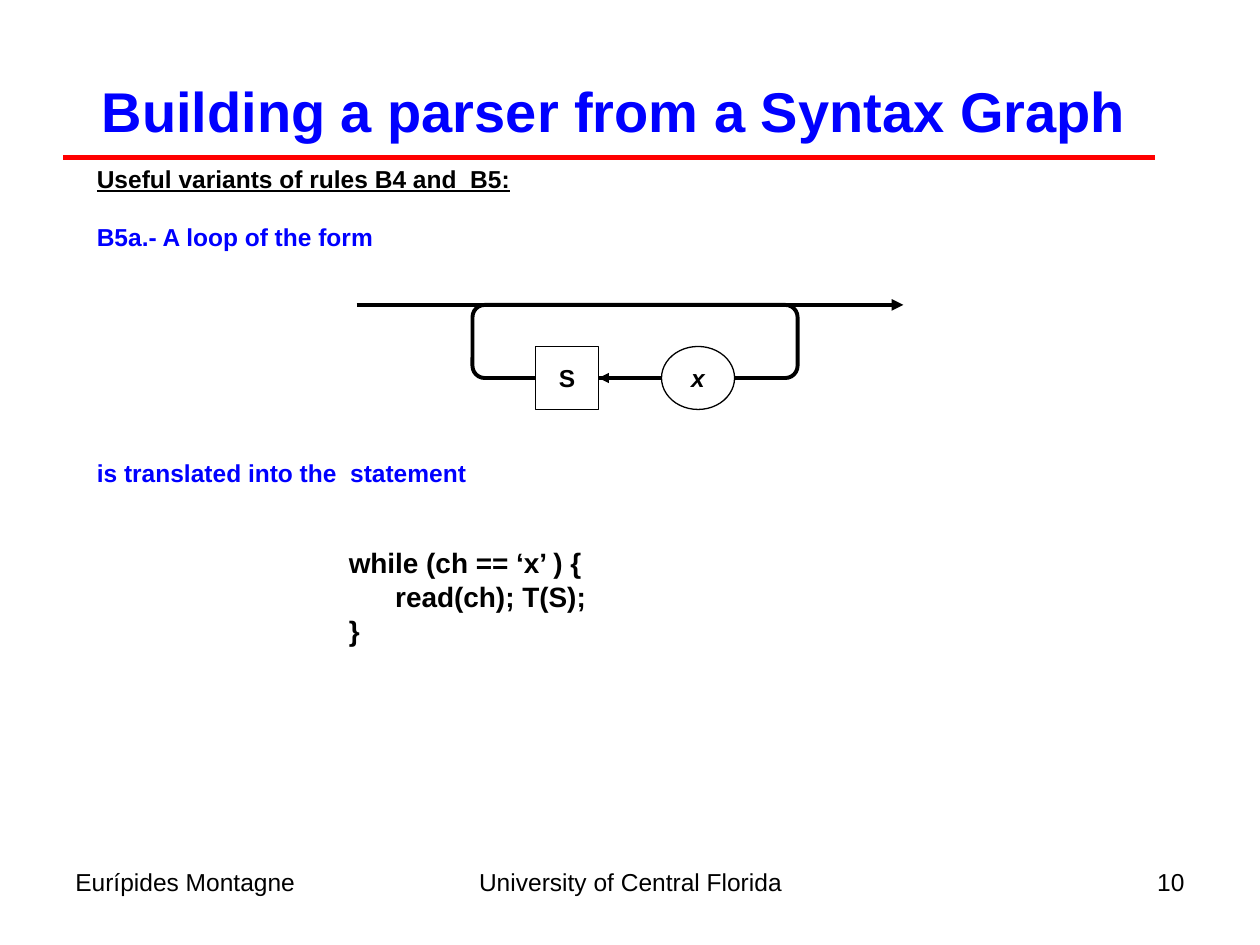
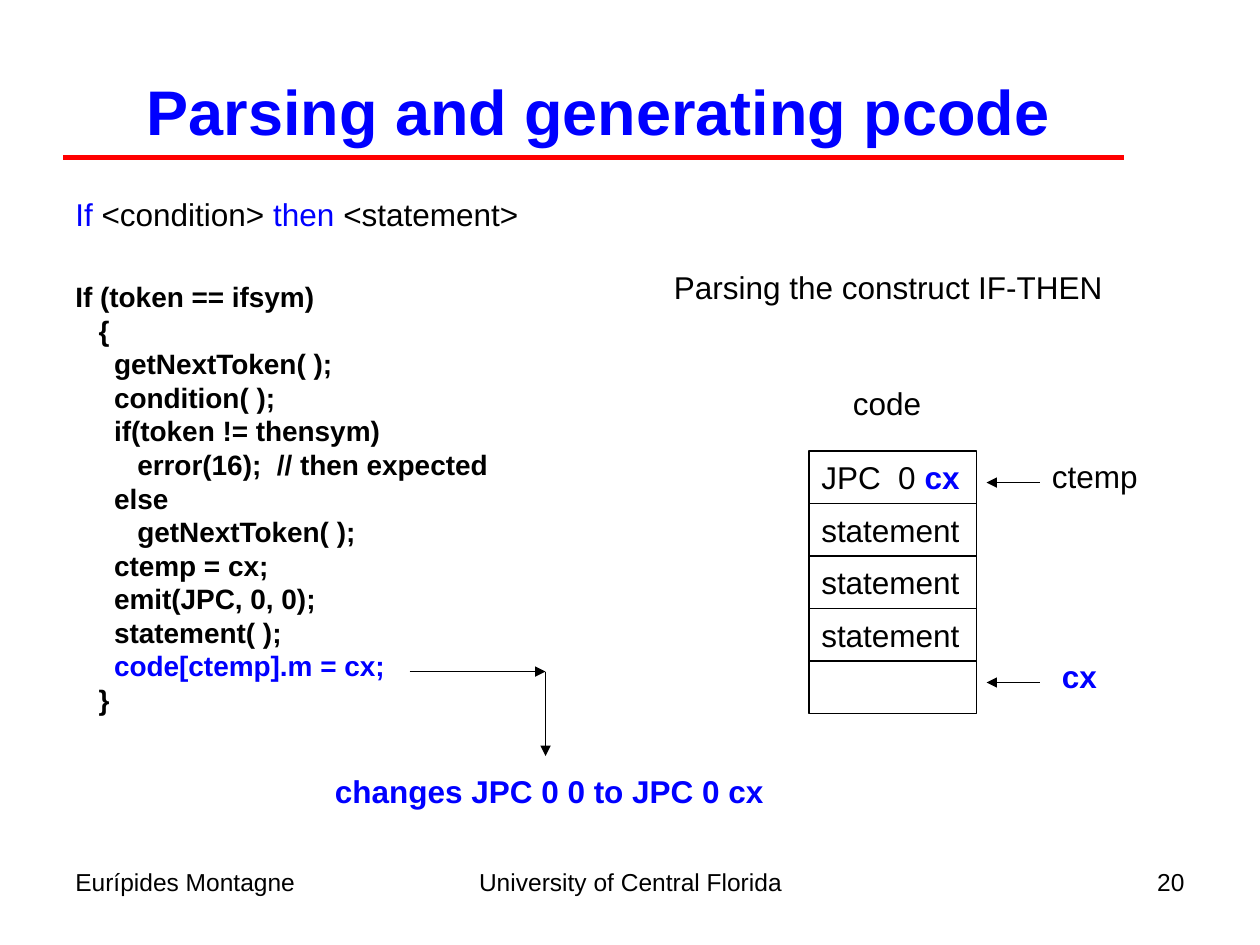
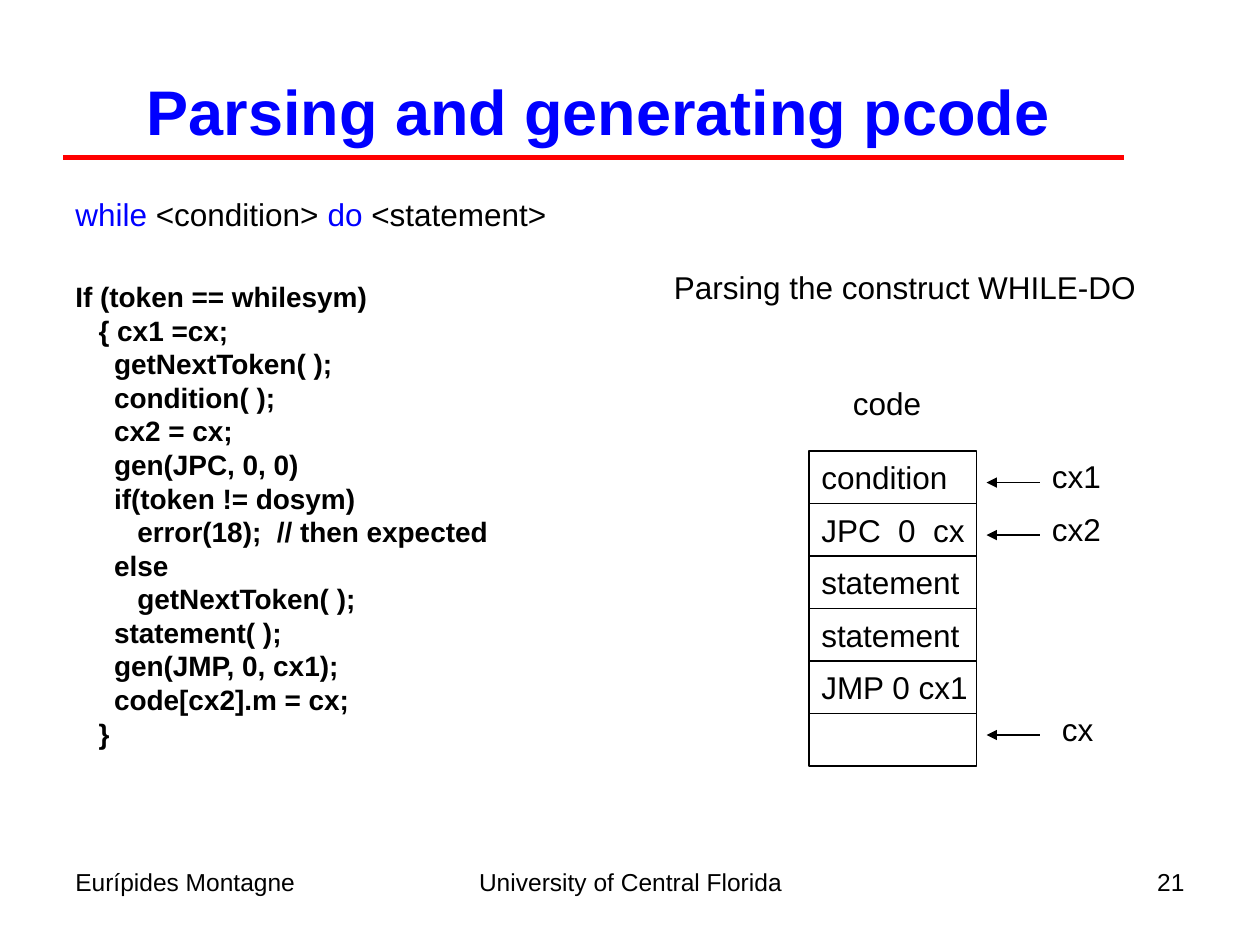
from dataclasses import dataclass

from pptx import Presentation
from pptx.dml.color import RGBColor
from pptx.enum.shapes import MSO_CONNECTOR, MSO_SHAPE
from pptx.enum.text import MSO_ANCHOR, MSO_AUTO_SIZE, PP_ALIGN
from pptx.oxml.ns import qn
from pptx.util import Inches, Pt
from lxml.etree import SubElement


@dataclass(frozen=True)
class Theme:
    font: str = "Arial"
    black: RGBColor = RGBColor(0, 0, 0)
    blue: RGBColor = RGBColor(0, 0, 255)
    red: RGBColor = RGBColor(255, 0, 0)
    white: RGBColor = RGBColor(255, 255, 255)
    small: int = 14
    code: int = 16
    body: int = 18
    leading: float = 1.2
    thin: float = 0.75
    track: float = 2.25
    rule: float = 3


THEME = Theme()
BLUE = {"color": THEME.blue}
BLUE_BOLD = {"color": THEME.blue, "bold": True}

# Content: a text is a list of paragraphs, a paragraph is a string or a list
# of runs, and a run is a string or a (string, format) pair.
AUTHOR = "Eurípides Montagne"
UNIVERSITY = "University of Central Florida"

LOOP_SLIDE = {
    "title": "Building a parser from a Syntax Graph",
    "title_size": 32,
    "title_width": 9.25,
    "number": 10,
    # text, format, blank lines above, left indent
    "steps": [
        ("Useful variants of rules B4 and  B5:", {"underline": True}, 0, 0),
        ("B5a.- A loop of the form", BLUE, 1, 0),
        ("is translated into the  statement", BLUE, 7, 0),
        ("while (ch == ‘x’ ) {", {"size": THEME.code}, 2, 2),
        ("      read(ch); T(S);", {"size": THEME.code}, 0, 2),
        ("}", {"size": THEME.code}, 0, 2),
    ],
}

PCODE_TITLE = {"title": "Parsing and generating pcode", "title_size": 36, "title_width": 9}

PCODE_SLIDES = [
    {
        **PCODE_TITLE,
        "number": 20,
        "grammar": [("If", BLUE), " <condition> ", ("then ", BLUE), "<statement>"],
        "caption": "Parsing the construct IF-THEN",
        "code": [
            "If (token == ifsym)",
            "   {",
            "     getNextToken( );",
            "     condition( );",
            "     if(token != thensym)",
            "        error(16);  // then expected",
            "     else",
            "        getNextToken( );",
            "     ctemp = cx;",
            "     emit(JPC, 0, 0);",
            "     statement( );",
            [("     code[ctemp].m = cx;", BLUE)],
            "   }",
        ],
        "cells": [["JPC  0 ", ("cx", BLUE_BOLD)], "statement", "statement", "statement", ""],
        "pointers": [("ctemp", 0, {})],
        "next_free": ("cx", 4, BLUE_BOLD),
        "effect": "changes JPC 0 0 to JPC 0 cx",
    },
    {
        **PCODE_TITLE,
        "number": 21,
        "grammar": [("while", BLUE), " <condition> ", ("do ", BLUE), "<statement>"],
        "caption": "Parsing the construct WHILE-DO",
        "code": [
            "If (token == whilesym)",
            "   { cx1 =cx;",
            "     getNextToken( );",
            "     condition( );",
            "     cx2 = cx;",
            "     gen(JPC, 0, 0)",
            "     if(token != dosym)",
            "        error(18);  // then expected",
            "     else",
            "        getNextToken( );",
            "     statement( );",
            "     gen(JMP, 0, cx1);",
            "     code[cx2].m = cx;",
            "   }",
        ],
        "cells": ["condition", "JPC  0  cx", "statement", "statement", "JMP 0 cx1", ""],
        "pointers": [("cx1", 0, {}), ("cx2", 1, {})],
        "next_free": ("cx", 5, {}),
    },
]

# Stack of code cells, in inches
STACK_LEFT, STACK_TOP = 6.42, 3.58
CELL_WIDTH, CELL_HEIGHT = 1.33, 5 / 12


# Text and shape helpers
def format_font(font, size, color, bold=False, italic=False, underline=False):
    font.name, font.size = THEME.font, Pt(size)
    font.color.rgb = color
    font.bold, font.italic, font.underline = bold, italic, underline


def write(frame, paragraphs, size=THEME.body, color=THEME.black,
          align=PP_ALIGN.LEFT, anchor=MSO_ANCHOR.TOP, **style):
    """Fill a text frame; runs may override the size, colour and style."""
    frame.word_wrap = True
    frame.auto_size = MSO_AUTO_SIZE.NONE
    frame.vertical_anchor = anchor
    base = {"size": size, "color": color, **style}
    for index, runs in enumerate(paragraphs):
        paragraph = frame.paragraphs[0] if index == 0 else frame.add_paragraph()
        paragraph.alignment = align
        line_size = size
        for part in [runs] if isinstance(runs, str) else runs:
            text, override = (part, {}) if isinstance(part, str) else part
            run = paragraph.add_run()
            run.text = text
            run_format = {**base, **override}
            format_font(run.font, **run_format)
            line_size = run_format["size"]
        paragraph.line_spacing = Pt(line_size * THEME.leading)


def add_text(slide, paragraphs, left, top, width, height=0.4, **style):
    box = slide.shapes.add_textbox(*map(Inches, (left, top, width, height)))
    write(box.text_frame, paragraphs, **style)
    return box


def add_outline(slide, preset, left, top, width, height, weight=THEME.thin, fill=None):
    shape = slide.shapes.add_shape(preset, *map(Inches, (left, top, width, height)))
    shape.shadow.inherit = False
    if fill is None:
        shape.fill.background()
    else:
        shape.fill.solid()
        shape.fill.fore_color.rgb = fill
    shape.line.color.rgb = THEME.black
    shape.line.width = Pt(weight)
    return shape


def add_line(slide, start, end, color=THEME.black, weight=THEME.thin, arrow=True):
    line = slide.shapes.add_connector(MSO_CONNECTOR.STRAIGHT, *map(Inches, (*start, *end)))
    line.line.color.rgb = color
    line.line.width = Pt(weight)
    if arrow:
        SubElement(line.line._get_or_add_ln(), qn("a:tailEnd"), type="triangle")
    SubElement(line._element.spPr, qn("a:effectLst"))
    return line


# Shared frame: title, red rule and footer
def add_frame(deck, content):
    slide = deck.slides.add_slide(deck.slide_layouts[5])
    title, width = slide.shapes.title, content["title_width"]
    title.left, title.top, title.width, title.height = map(Inches, (0.25, 0.25, width, 1.25))
    write(title.text_frame, [content["title"]], size=content["title_size"],
          color=THEME.blue, bold=True, align=PP_ALIGN.CENTER, anchor=MSO_ANCHOR.MIDDLE)
    add_line(slide, (0.5, 1.25), (width - 0.08, 1.25), THEME.red, THEME.rule, arrow=False)

    footer = [
        (AUTHOR, 0.5, 2.33, PP_ALIGN.LEFT),
        (UNIVERSITY, 3.42, 3.17, PP_ALIGN.CENTER),
        (str(content["number"]), 7.17, 2.33, PP_ALIGN.RIGHT),
    ]
    for text, left, part_width, align in footer:
        add_text(slide, [text], left, 6.83, part_width, 0.52, size=THEME.small, align=align)
    return slide


def add_symbol(slide, preset, text, left, width, **style):
    symbol = add_outline(slide, preset, left, 2.75, width, 0.5, fill=THEME.white)
    frame = symbol.text_frame
    frame.margin_left = frame.margin_right = 0
    write(frame, [text], size=THEME.small, bold=True,
          align=PP_ALIGN.CENTER, anchor=MSO_ANCHOR.MIDDLE, **style)
    return symbol


def build_loop_slide(deck, content):
    slide = add_frame(deck, content)

    # Rule and its translation
    steps = content["steps"]
    rule_text = add_text(slide, [[(text, style)] for text, style, _, _ in steps],
                         0.67, 1.25, 4.4, 4.43, size=THEME.small, bold=True)
    blank_line = THEME.small * THEME.leading
    for paragraph, (_, _, blanks, indent) in zip(rule_text.text_frame.paragraphs, steps):
        if blanks:
            paragraph.space_before = Pt(blanks * blank_line)
        if indent:
            paragraph._p.get_or_add_pPr().set("marL", str(Inches(indent)))

    # Syntax graph
    add_outline(slide, MSO_SHAPE.FLOWCHART_ALTERNATE_PROCESS,
                3.75, 2.42, 2.58, 0.58, weight=THEME.track)
    add_line(slide, (2.83, 2.42), (7.17, 2.42), weight=THEME.track)
    statement = add_symbol(slide, MSO_SHAPE.RECTANGLE, "S", 4.25, 0.5)
    back_arrow = add_line(slide, (5.25, 3), (4.75, 3))
    back_arrow.end_connect(statement, 3)
    add_symbol(slide, MSO_SHAPE.OVAL, "x", 5.25, 0.58, italic=True)


def add_pointer(slide, label, left, top, style):
    add_text(slide, [label], left, top, 1.25, **style)
    add_line(slide, (8.25, top + 0.25), (7.83, top + 0.25))


def build_pcode_slide(deck, content):
    slide = add_frame(deck, content)
    add_text(slide, content["code"], 0.5, 2.17, 3.92, 3.87, size=THEME.code, bold=True)
    add_text(slide, [content["grammar"]], 0.5, 1.5, 4.2)
    add_text(slide, [content["caption"]], 5.25, 2.08, 4.1)
    add_text(slide, ["code"], 6.67, 3, 0.9)

    # Code stack
    def row_top(row):
        return STACK_TOP + row * CELL_HEIGHT

    for row, text in enumerate(content["cells"]):
        cell = add_outline(slide, MSO_SHAPE.RECTANGLE,
                           STACK_LEFT, row_top(row), CELL_WIDTH, CELL_HEIGHT)
        if text:
            cell.text_frame.margin_right = 0
            write(cell.text_frame, [text], anchor=MSO_ANCHOR.MIDDLE)

    # Pointers into the stack
    for label, row, style in content["pointers"]:
        add_pointer(slide, label, 8.25, row_top(row), style)
    label, row, style = content["next_free"]
    add_pointer(slide, label, 8.33, row_top(row) - 0.08, style)

    # Effect of the last assignment
    if "effect" in content:
        add_text(slide, [content["effect"]], 2.56, 6.08, 3.8, **BLUE_BOLD)
        corner = (4.33, 5.33)
        add_line(slide, (3.25, 5.33), corner)
        add_line(slide, corner, (4.33, 6))


def main():
    deck = Presentation()
    deck.slide_width, deck.slide_height = Inches(10), Inches(7.5)
    build_loop_slide(deck, LOOP_SLIDE)
    for content in PCODE_SLIDES:
        build_pcode_slide(deck, content)
    deck.save("out.pptx")


if __name__ == "__main__":
    main()
